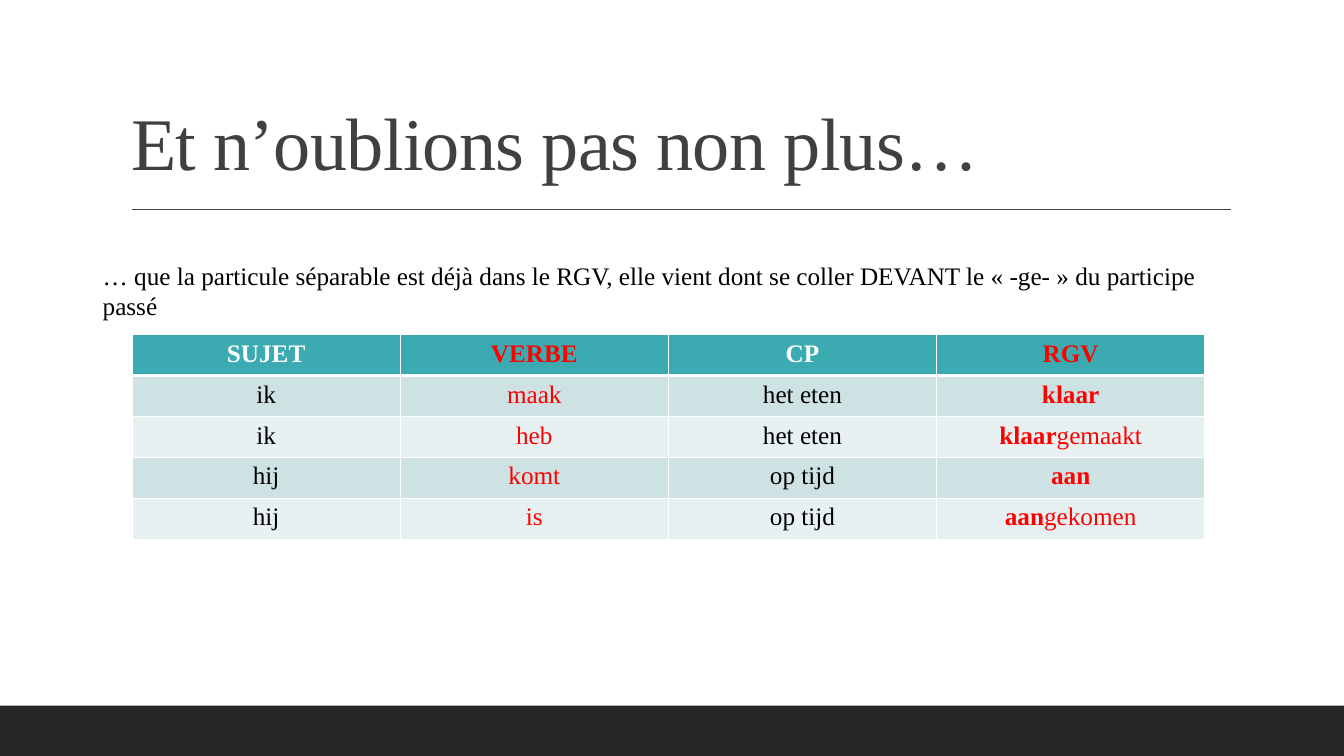
import pptx
import pptx.dml.color
import pptx.enum.shapes
import pptx.enum.text
import pptx.oxml
import pptx.oxml.ns
import pptx.util
from lxml import etree

WIDTH, HEIGHT = 13.33, 7.5
FONT = "Times New Roman"
COLORS = {
    "ink": "000000",
    "title": "404040",
    "footer": "262626",
    "white": "FFFFFF",
    "accent": "FF0000",
    "header": "3BABB1",
    "odd": "CEE2E4",
    "even": "E8F1F2",
}
HEADINGS = ["SUJET", "VERBE", "CP", "RGV"]
# The last column holds the separable particle and the rest of the participle.
SENTENCES = [
    ("ik", "maak", "het eten", ("klaar", "")),
    ("ik", "heb", "het eten", ("klaar", "gemaakt")),
    ("hij", "komt", "op tijd", ("aan", "")),
    ("hij", "is", "op tijd", ("aan", "gekomen")),
]
RED_COLUMNS = (1, 3)


def inches(*lengths):
    return [pptx.util.Inches(length) for length in lengths]


def rgb(name):
    return pptx.dml.color.RGBColor.from_string(COLORS[name])


def set_font(p, size, color):
    p.font.name = FONT
    p.font.size = pptx.util.Pt(size)
    p.font.color.rgb = rgb(color)


def add_footer_band(s, left, top, width, height):
    band = s.shapes.add_shape(pptx.enum.shapes.MSO_SHAPE.RECTANGLE,
                              *inches(left, top, width, height))
    band.shadow.inherit = False
    band.fill.solid()
    band.fill.fore_color.rgb = rgb("footer")
    band.line.fill.background()


def add_heading(s, left, top, width, height):
    """Place the title and the rule below it."""
    title = s.shapes.title
    title.left, title.top, title.width, title.height = inches(left, top, width, height)
    tf = title.text_frame
    tf.word_wrap = True
    tf.auto_size = pptx.enum.text.MSO_AUTO_SIZE.NONE
    tf.vertical_anchor = pptx.enum.text.MSO_ANCHOR.BOTTOM
    p = tf.paragraphs[0]
    p.alignment = pptx.enum.text.PP_ALIGN.LEFT
    p.line_spacing = 0.9
    set_font(p, 53, "title")
    r = p.add_run()
    r.text = "Et n’oublions pas non plus…"
    r.font._element.set("spc", "-50")

    rule_left, rule_y = left + 0.11, top + height + 0.18
    rule = s.shapes.add_connector(pptx.enum.shapes.MSO_CONNECTOR.STRAIGHT,
                                  *inches(rule_left, rule_y, left + width + 0.01, rule_y))
    rule.line.color.rgb = rgb("title")
    rule.line.width = pptx.util.Pt(1)
    etree.SubElement(rule._element.spPr, pptx.oxml.ns.qn("a:effectLst"))


def add_explanation(s, left, top, width, height):
    tf = s.shapes.add_textbox(*inches(left, top, width, height)).text_frame
    tf.word_wrap = True
    p = tf.paragraphs[0]
    p.text = ("… que la particule séparable est déjà dans le RGV, elle vient dont "
              "se coller DEVANT le « -ge- » du participe passé")
    set_font(p, 18, "ink")


def set_borders(cell, widths):
    """Draw white cell borders; widths maps each side to points."""
    tc_pr = cell._tc.get_or_add_tcPr()
    for position, side in enumerate("LRTB"):
        line = pptx.oxml.parse_xml(
            f'<a:ln{side} {pptx.oxml.ns.nsdecls("a")} w="{pptx.util.Pt(widths[side])}">'
            f'<a:solidFill><a:srgbClr val="{COLORS["white"]}"/></a:solidFill></a:ln{side}>')
        tc_pr.insert(position, line)


def fill_cell(cell, parts, color, fill, widths):
    """Write (text, bold) parts into a centred cell."""
    cell.fill.solid()
    cell.fill.fore_color.rgb = rgb(fill)
    set_borders(cell, widths)
    p = cell.text_frame.paragraphs[0]
    p.alignment = pptx.enum.text.PP_ALIGN.CENTER
    set_font(p, 18, color)
    for text, bold in parts:
        if text:
            r = p.add_run()
            r.text = text
            r.font.bold = bold


def add_sentence_table(s, left, top, width, height):
    rows = [HEADINGS, *SENTENCES]
    table = s.shapes.add_table(len(rows), len(HEADINGS),
                               *inches(left, top, width, height)).table
    for i, row in enumerate(rows):
        fill = "header" if i == 0 else "odd" if i % 2 else "even"
        widths = {"L": 1, "R": 1, "T": 3 if i == 1 else 1, "B": 3 if i == 0 else 1}
        for j, value in enumerate(row):
            if isinstance(value, tuple):
                parts = [(value[0], True), (value[1], False)]
            else:
                parts = [(value, i == 0)]
            plain = "white" if i == 0 else "ink"
            color = "accent" if j in RED_COLUMNS else plain
            fill_cell(table.cell(i, j), parts, color, fill, widths)


def main():
    prs = pptx.Presentation()
    prs.slide_width, prs.slide_height = inches(WIDTH, HEIGHT)
    s = prs.slides.add_slide(prs.slide_layouts.get_by_name("Title Only"))
    add_footer_band(s, 0, HEIGHT - 0.5, WIDTH, 0.5)
    add_heading(s, 1.2, 0.31, 11, 1.59)
    add_sentence_table(s, 1.31, 3.32, 10.64, 2.03)
    add_explanation(s, 0.92, 2.53, 11.28, 0.71)
    prs.save("out.pptx")


if __name__ == "__main__":
    main()
